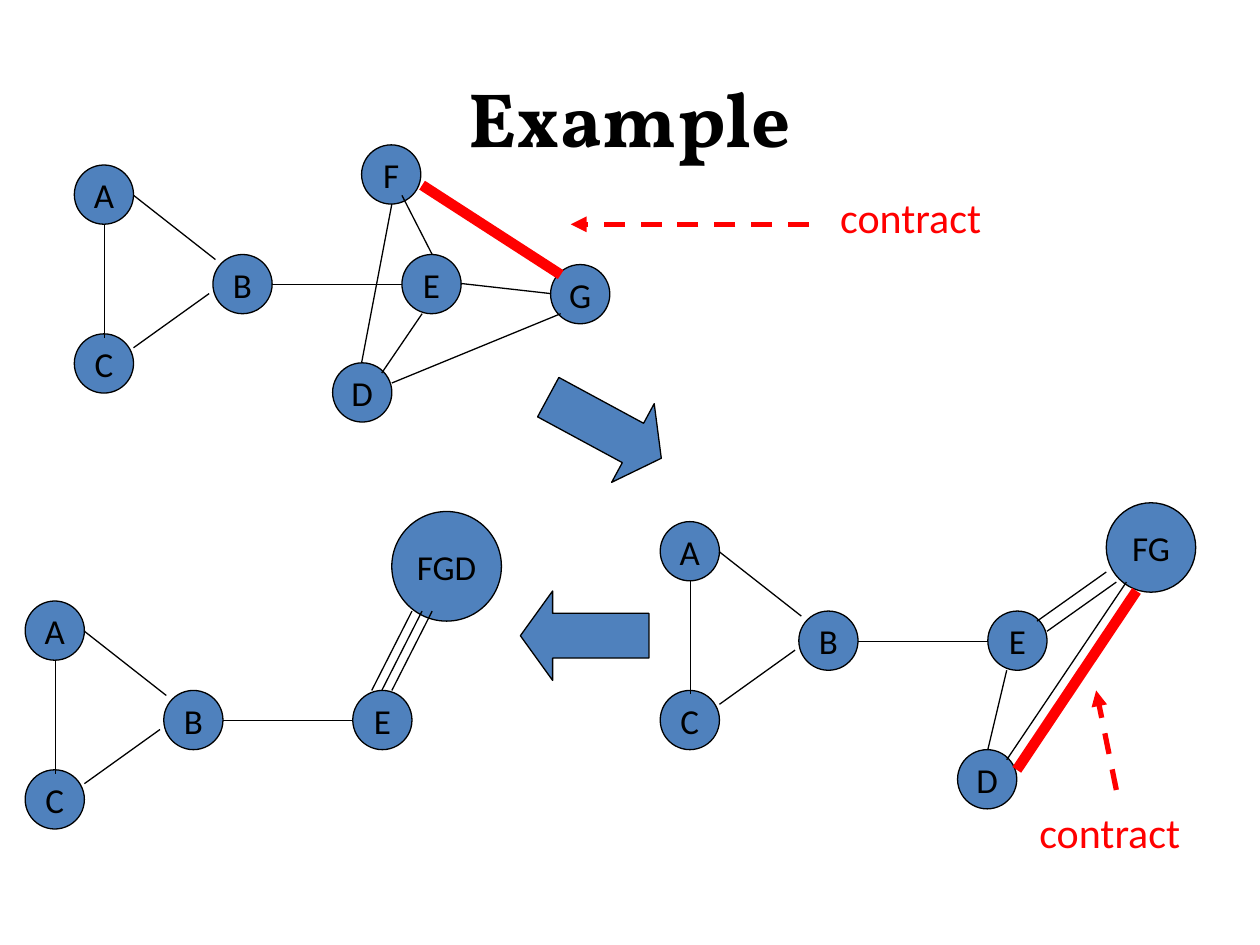
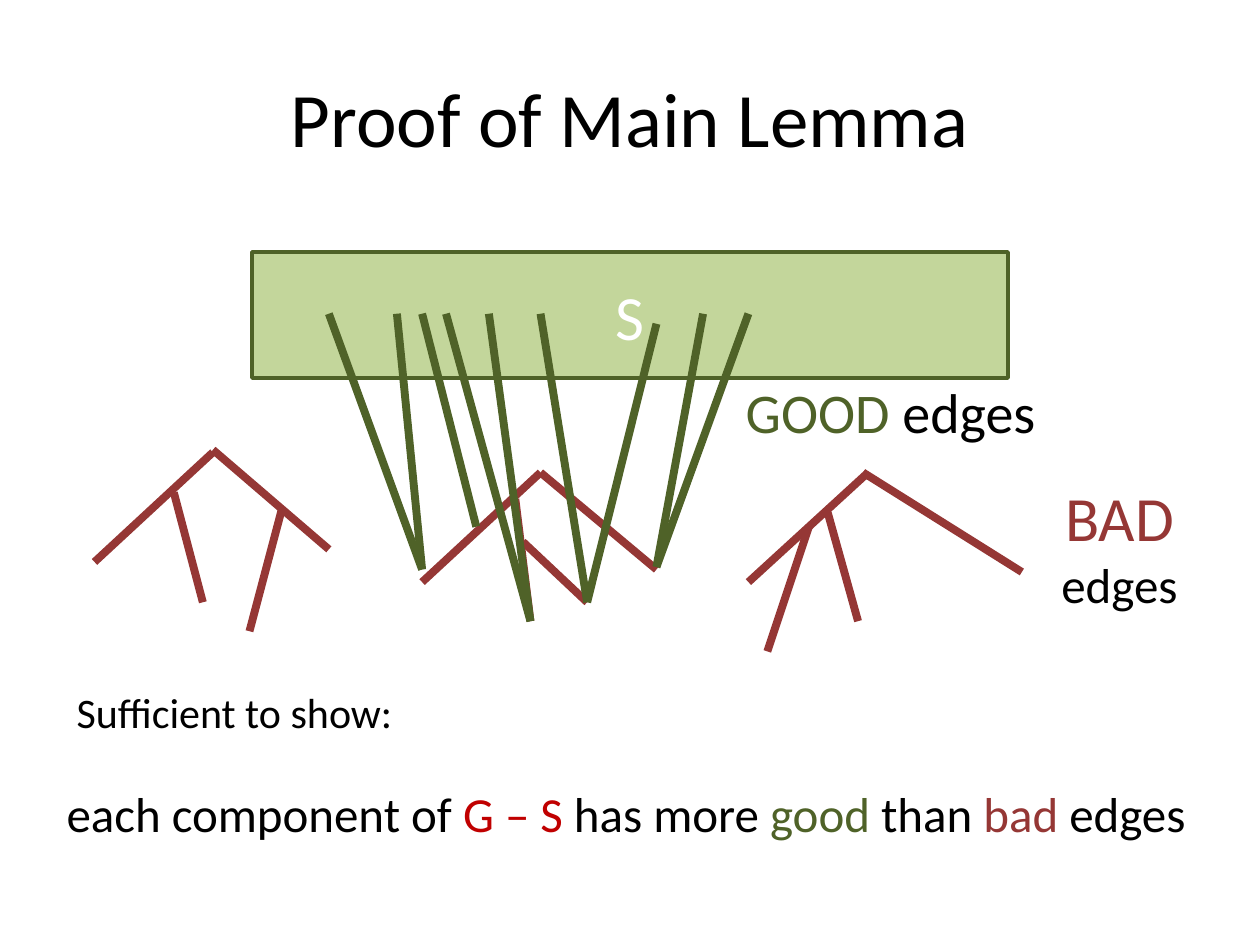
from pptx import Presentation
from pptx.dml.color import RGBColor as RGB
from pptx.enum.dml import MSO_LINE as Dash
from pptx.enum.shapes import MSO_CONNECTOR as Conn, MSO_SHAPE as Shape
from pptx.enum.text import MSO_ANCHOR as Anchor, MSO_AUTO_SIZE as Fit, PP_ALIGN as Align
from pptx.oxml.ns import qn
from pptx.util import Inches, Pt
from lxml.etree import SubElement

HEX = dict(black="000000", white="FFFFFF", blue="4F81BD", red="FF0000",
           good="4F6228", bad="953735", pale="C3D69B", deep="C00000")
RGBS = {name: RGB.from_string(code) for name, code in HEX.items()}
FONT = "Calibri"
SIZE = 0.47  # diameter of a plain node


def line(slide, start, end, color="black", width=0.75, arrow=False):
    """Draw a straight line; an arrow is dashed with a head at its end."""
    link = slide.shapes.add_connector(
        Conn.STRAIGHT, *[Inches(v) for v in (*start, *end)])
    link.line.color.rgb = RGBS[color]
    link.line.width = Pt(width)
    if arrow:
        link.line.dash_style = Dash.DASH
        SubElement(link.line._get_or_add_ln(), qn("a:tailEnd"), type="triangle")
    SubElement(link._element.spPr, qn("a:effectLst"))


def label(slide, box, paras, align=Align.LEFT):
    """Add a text box; paras holds (size, [(text, color), ...]) pairs."""
    frame = slide.shapes.add_textbox(*[Inches(v) for v in box]).text_frame
    frame.word_wrap = False
    frame.auto_size = Fit.SHAPE_TO_FIT_TEXT
    for i, (size, runs) in enumerate(paras):
        para = frame.add_paragraph() if i else frame.paragraphs[0]
        para.alignment = align
        para.font.size, para.font.name = Pt(size), FONT
        if len(runs) == 1:
            para.font.color.rgb = RGBS[runs[0][1]]
        for words, color in runs:
            run = para.add_run()
            run.text = words
            if len(runs) > 1:
                run.font.color.rgb = RGBS[color]


deck = Presentation()
deck.slide_width, deck.slide_height = Inches(10), Inches(7.5)

slides = []
for words, font, bold in [("Example", "Vollkorn", True),
                          ("Proof of Main Lemma", FONT, False)]:
    slide = deck.slides.add_slide(deck.slide_layouts[5])
    title = slide.shapes.title
    title.left, title.top = Inches(0.5), Inches(0.3)
    title.width, title.height = Inches(9), Inches(1.25)
    title.text_frame.text = words
    title.text_frame.vertical_anchor = Anchor.MIDDLE
    para = title.text_frame.paragraphs[0]
    para.alignment = Align.CENTER
    para.font.name, para.font.size, para.font.bold = font, Pt(44), bold
    para.font.color.rgb = RGBS["black"]
    slides.append(slide)
graph, proof = slides

# Every graph keeps nodes A, B, C and E, placed from the corner of A
base = [("A", 0, 0), ("C", 0, 1.34), ("B", 1.1, 0.71), ("E", 2.6, 0.71)]
ties = [((1.07, 1.02), (0.47, 1.45)), ((1.12, 0.75), (0.47, 0.24)),
        ((0.24, 1.37), (0.24, 0.47)), ((2.6, 0.95), (1.57, 0.95))]

# Corner of A, further nodes, further thin edges, contracted edge
stages = [
    ((0.59, 1.31),
     [("D", 2.64, 2.88, SIZE), ("G", 4.37, 2.1, SIZE), ("F", 2.87, 1.15, SIZE)],
     [((2.87, 2.88), (3.11, 1.62)), ((3.11, 3.04), (4.45, 2.49)),
      ((3.66, 2.25), (4.37, 2.33)), ((3.43, 2.02), (3.19, 1.55)),
      ((3.35, 2.49), (3.03, 2.96))],
     [((3.35, 1.47), (4.45, 2.18))]),
    ((5.24, 4.14),
     [("D", 7.6, 5.95, SIZE), ("FG", 8.78, 3.99, 0.71)],
     [((7.99, 5.32), (7.84, 5.95)), ((8.23, 4.93), (8.78, 4.54)),
      ((8.31, 5.01), (8.86, 4.62)), ((7.99, 6.03), (8.94, 4.62))],
     [((8.07, 6.11), (9.02, 4.69))]),
    ((0.2, 4.77),
     [("FGD", 3.11, 4.06, 0.87)],
     [((x, 5.48), (x + 0.32, 4.85)) for x in (2.95, 3.03, 3.11)],
     []),
]
for (left, top), extra, thin, thick in stages:
    nodes = [(name, left + x, top + y, SIZE) for name, x, y in base] + extra
    for name, x, y, size in nodes:
        node = graph.shapes.add_shape(
            Shape.OVAL, Inches(x), Inches(y), Inches(size), Inches(size))
        node.shadow.inherit = False
        node.fill.solid()
        node.fill.fore_color.rgb = RGBS["blue"]
        node.line.color.rgb = RGBS["black"]
        node.line.width = Pt(0.75)
        node.text_frame.text = name
        node.text_frame.word_wrap = False
        node.text_frame.vertical_anchor = Anchor.MIDDLE
        para = node.text_frame.paragraphs[0]
        para.alignment = Align.CENTER
        para.font.name, para.font.size = FONT, Pt(20)
        para.font.color.rgb = RGBS["black"]
    for (x1, y1), (x2, y2) in ties:
        line(graph, (left + x1, top + y1), (left + x2, top + y2))
    for start, end in thin:
        line(graph, start, end)
    for start, end in thick:
        line(graph, start, end, "red", 6)

for start, end, x, y in [((6.42, 1.78), (4.53, 1.78), 6.57, 1.47),
                         ((8.86, 6.27), (8.7, 5.48), 8.15, 6.35)]:
    line(graph, start, end, "red", 3, arrow=True)
    label(graph, (x, y, 1.39, 0.5), [(24, [("contract", "red")])])

for x, y, turn in [(4.29, 3.04, 28.4), (4.13, 4.69, 180)]:
    step = graph.shapes.add_shape(
        Shape.RIGHT_ARROW, Inches(x), Inches(y), Inches(1.02), Inches(0.71))
    step.rotation = turn
    step.adjustments[1] = 0.36
    step.shadow.inherit = False
    step.fill.solid()
    step.fill.fore_color.rgb = RGBS["blue"]
    step.line.color.rgb = RGBS["black"]
    step.line.width = Pt(0.75)

# Outline of S: each cubic curve is followed in short steps
curves = [((3.96, 1.96), (2.8, 1.89), (2.34, 1.99)),
          ((1.88, 2.08), (1.29, 2.43), (2.08, 2.56)),
          ((2.86, 2.69), (6.15, 2.81), (7.06, 2.75)),
          ((7.97, 2.69), (7.91, 2.32), (7.54, 2.19)),
          ((7.17, 2.07), (5.69, 2.03), (4.82, 2))]
STEPS = 24
dots = [(4.82, 2)]
for a, b, c in curves:
    start = dots[-1]
    for i in range(1, STEPS + 1):
        t = i / STEPS
        u = 1 - t
        dots.append(tuple(u**3 * p + 3 * u * u * t * q + 3 * u * t * t * r + t**3 * s
                          for p, q, r, s in zip(start, a, b, c)))
pen = proof.shapes.build_freeform(*dots[0], scale=Inches(1))
pen.add_line_segments(dots[1:], close=True)
blob = pen.convert_to_shape()
blob.shadow.inherit = False
blob.fill.solid()
blob.fill.fore_color.rgb = RGBS["pale"]
blob.line.color.rgb = RGBS["good"]
blob.line.width = Pt(2)
blob.text_frame.text = "S"
blob.text_frame.vertical_anchor = Anchor.MIDDLE
para = blob.text_frame.paragraphs[0]
para.alignment = Align.CENTER
para.font.name, para.font.size = FONT, Pt(36)
para.font.color.rgb = RGBS["white"]

edges = {
    "bad": [((1.69, 3.59), (0.75, 4.46)), ((1.38, 3.91), (1.61, 4.78)),
            ((1.69, 3.57), (2.61, 4.36)), ((2.24, 4.03), (1.98, 5.01)),
            ((4.29, 3.75), (3.35, 4.62)), ((4.09, 3.96), (4.21, 4.93)),
            ((4.29, 3.75), (5.21, 4.52)), ((6.89, 3.75), (5.94, 4.62)),
            ((6.57, 4.07), (6.81, 4.93)), ((6.85, 3.75), (8.11, 4.54)),
            ((6.42, 4.18), (6.09, 5.17)), ((4.15, 4.3), (4.66, 4.78))],
    "good": [((2.61, 2.49), (3.35, 4.52)), ((3.15, 2.49), (3.35, 4.52)),
             ((3.54, 2.49), (4.21, 4.93)), ((3.88, 2.49), (4.21, 4.93)),
             ((5.94, 2.49), (5.21, 4.5)), ((5.58, 2.49), (5.21, 4.5)),
             ((4.29, 2.49), (4.66, 4.78)), ((5.21, 2.57), (4.66, 4.78)),
             ((3.35, 2.49), (3.78, 4.18))],
}
for color, pairs in edges.items():
    for start, end in pairs:
        line(proof, start, end, color, 4.5)

label(proof, (8.32, 3.75, 1.13, 1.18),
      [(36, [("BAD", "bad")]), (28, [("edges", "black")])], Align.CENTER)
label(proof, (5.82, 2.95, 2.53, 0.64),
      [(32, [("GOOD ", "good"), ("edges", "black")])])
label(proof, (0.51, 5.4, 2.74, 0.5), [(24, [("Sufficient to show:", "black")])])
label(proof, (0.43, 6.17, 9.19, 0.57),
      [(28, [("each component of ", "black"), ("G – S ", "deep"),
             ("has more ", "black"), ("good ", "good"), ("than ", "black"),
             ("bad ", "bad"), ("edges", "black")])])

deck.save("out.pptx")
